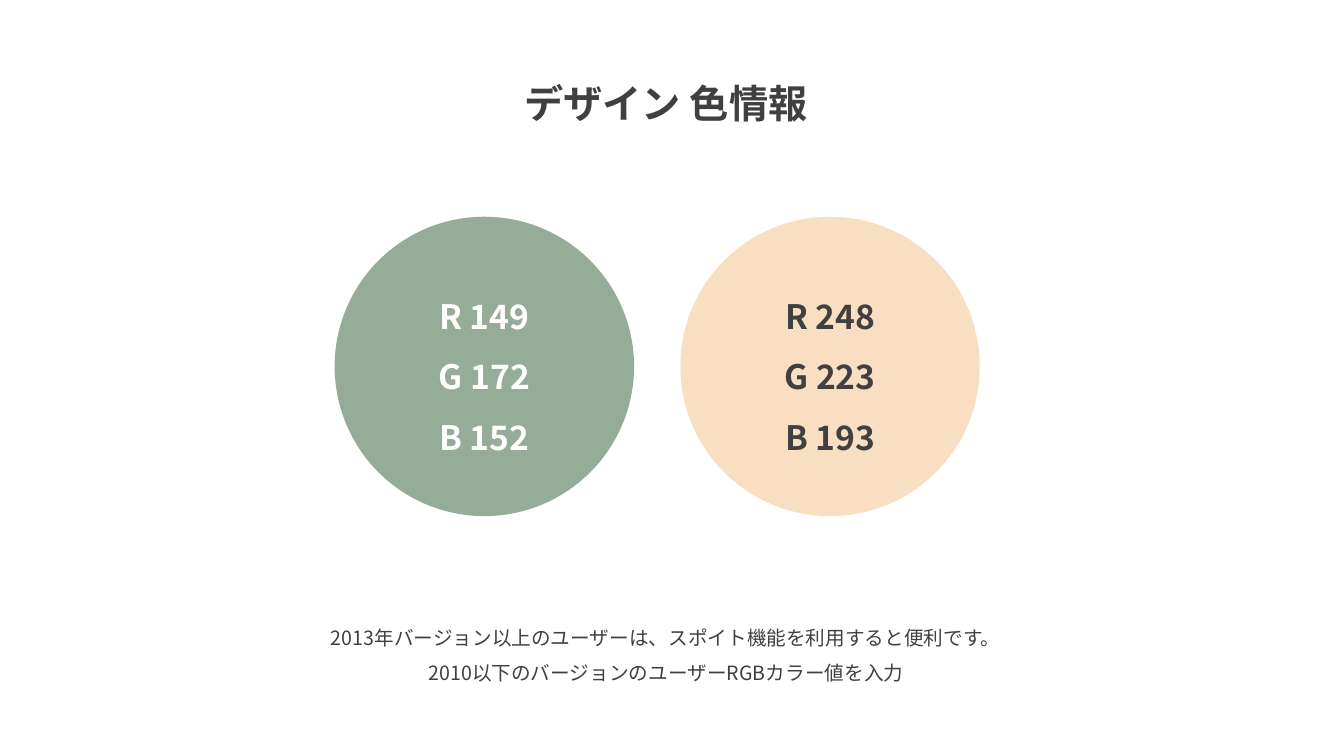
from lxml.etree import SubElement
from pptx import Presentation
from pptx.dml.color import RGBColor
from pptx.enum.shapes import MSO_SHAPE
from pptx.enum.text import MSO_ANCHOR, MSO_AUTO_SIZE, PP_ALIGN
from pptx.oxml.ns import qn
from pptx.util import Inches, Pt

FONT = "Noto Sans CJK KR"
WHITE = RGBColor(255, 255, 255)
INK = RGBColor(64, 64, 64)
SAGE = RGBColor(149, 172, 152)
PEACH = RGBColor(248, 223, 193)

SWATCHES = [(SAGE, WHITE), (PEACH, INK)]
TITLE = "デザイン 色情報"
NOTE = [
    "2013年バージョン以上のユーザーは、スポイト機能を利用すると便利です。",
    "2010以下のバージョンのユーザーRGBカラー値を入力",
]


def share_box(prs, left, top, width, height):
    column, row = prs.slide_width / 100, prs.slide_height / 100
    return [round(v) for v in (left * column, top * row, width * column, height * row)]


def write_lines(tf, lines, size, color, bold):
    tf.text = "\n".join(lines)
    tf.word_wrap = True
    for p in tf.paragraphs:
        p.alignment = PP_ALIGN.CENTER
        p.line_spacing = 1.5
        for r in p.runs:
            r.font.name = FONT
            r.font.size = Pt(size)
            r.font.bold = bold
            r.font.color.rgb = color
            SubElement(r.font._element, qn("a:ea"), typeface=FONT)


def add_text(s, box, lines, size, bold=False):
    tf = s.shapes.add_textbox(*box).text_frame
    write_lines(tf, lines, size, INK, bold)
    tf.auto_size = MSO_AUTO_SIZE.SHAPE_TO_FIT_TEXT


def add_swatches(s, box):
    left, top, width, diameter = box
    step = (width - diameter) / (len(SWATCHES) - 1)
    for i, (fill, ink) in enumerate(SWATCHES):
        sp = s.shapes.add_shape(
            MSO_SHAPE.OVAL, round(left + i * step), top, diameter, diameter
        )
        sp.shadow.inherit = False
        sp.fill.solid()
        sp.fill.fore_color.rgb = fill
        sp.line.fill.background()
        tf = sp.text_frame
        tf.vertical_anchor = MSO_ANCHOR.MIDDLE
        lines = [f"{channel} {value}" for channel, value in zip("RGB", fill)]
        write_lines(tf, lines, 24, ink, True)


def main():
    prs = Presentation()
    prs.slide_width, prs.slide_height = Inches(13.33), Inches(7.5)
    s = prs.slides.add_slide(prs.slide_layouts[6])
    add_swatches(s, share_box(prs, 24.9, 28.67, 48, 39.6))
    add_text(s, share_box(prs, 32.18, 6.67, 34.73, 9.87), [TITLE], 28, True)
    add_text(s, share_box(prs, 19.58, 80.53, 59.94, 10.27), NOTE, 14)
    prs.save("out.pptx")


if __name__ == "__main__":
    main()
